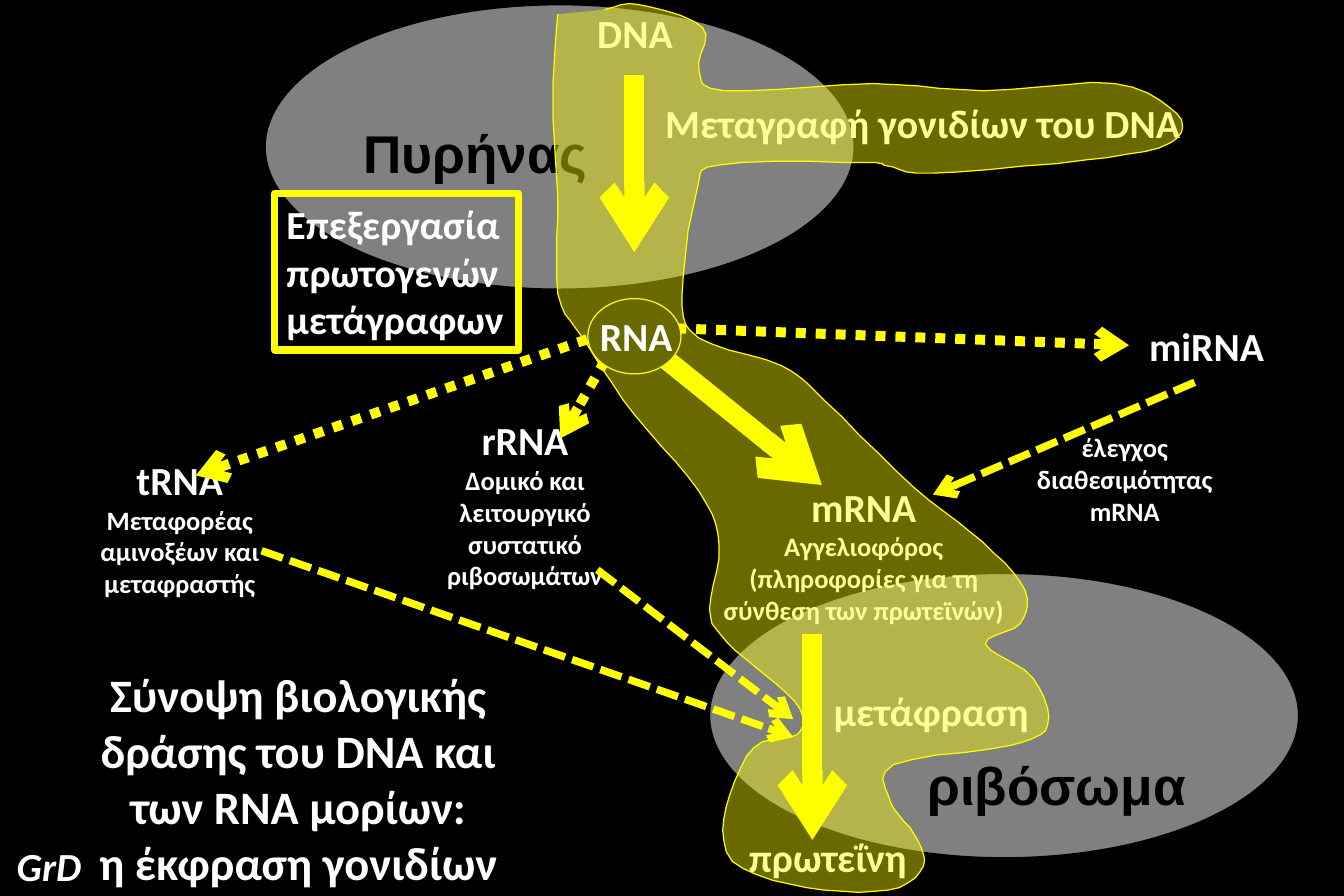
from pptx import Presentation
from pptx import util as u
from pptx.dml.color import RGBColor
from pptx.enum import dml, shapes, text
from pptx.oxml.ns import qn
from lxml import etree

PX = 9144  # EMU in one px, 100 px to the inch
YELLOW, WHITE, BLACK, GREY = "FFFF00", "FFFFFF", "000000", "808080"
DOTS, DASHES = dml.MSO_LINE.ROUND_DOT, dml.MSO_LINE.SQUARE_DOT
MIDDLE, TOP = text.MSO_ANCHOR.MIDDLE, text.MSO_ANCHOR.TOP
CENTER, LEFT = text.PP_ALIGN.CENTER, text.PP_ALIGN.LEFT

# Main path DNA -> RNA -> mRNA -> protein, with the branch for transcription
MAIN_PATH = [
    (467, 12), (463, 85), (467, 165), (467, 246), (488, 283), (531, 347), (585, 411),
    (602, 456), (594, 510), (608, 537), (656, 578), (671, 597), (667, 615), (631, 626),
    (608, 675), (613, 721), (675, 743), (744, 745), (773, 725), (765, 698), (746, 673),
    (748, 640), (846, 624), (877, 607), (865, 568), (825, 539), (854, 522), (858, 494),
    (823, 454), (765, 408), (692, 337), (654, 306), (585, 283), (571, 246), (583, 161),
    (603, 138), (723, 136), (743, 139), (781, 145), (908, 134), (979, 120), (985, 95),
    (933, 70), (823, 76), (731, 70), (606, 76), (585, 58), (588, 23), (535, 4), (506, 8),
]


def rgb(value):
    return RGBColor.from_string(value)


def smooth(points, steps=5):
    """Points of a Catmull-Rom curve that passes through the given points."""
    curve = []
    for a, b, c, d in zip(points[:1] + points, points, points[1:],
                          points[2:] + points[-1:]):
        for t in (i / steps for i in range(steps)):
            curve.append(tuple(
                q + t / 2 * (r - p + t * (2 * p - 5 * q + 4 * r - s
                                          + t * (3 * (q - r) + s - p)))
                for p, q, r, s in zip(a, b, c, d)))
    return curve + points[-1:]


def write(tf, content, *, size=24, sizes=None, font="Calibri", color=WHITE, italic=False,
          align=CENTER, anchor=TOP, wrap=True, inset=(10, 5)):
    """Fill a text frame, one paragraph a line; sizes gives each line its own size."""
    tf.word_wrap, tf.vertical_anchor = wrap, anchor
    tf.auto_size = text.MSO_AUTO_SIZE.NONE
    tf.margin_left, tf.margin_top = (n * PX for n in inset)
    tf.margin_right, tf.margin_bottom = 10 * PX, 5 * PX
    for i, line in enumerate(content.split("\n")):
        p = tf.paragraphs[0] if i == 0 else tf.add_paragraph()
        p.alignment = align
        r = p.add_run()
        r.text = line
        r.font.name, r.font.size = font, u.Pt(sizes[i] if sizes else size)
        r.font.bold, r.font.italic = True, italic
        r.font.color.rgb = rgb(color)


class Diagram:
    def __init__(self, slide):
        self.slide, self.shapes = slide, slide.shapes

    def style(self, sp, fill, line, width):
        sp.shadow.inherit = False
        if fill:
            sp.fill.solid()
            sp.fill.fore_color.rgb = rgb(fill)
        else:
            sp.fill.background()
        sp.line.color.rgb, sp.line.width = rgb(line), u.Pt(width)

    def shape(self, kind, box, fill=None, line=YELLOW, width=0.75):
        sp = self.shapes.add_shape(kind, *(n * PX for n in box))
        self.style(sp, fill, line, width)
        return sp

    def compartment(self, x, y, name, inset):
        sp = self.shape(shapes.MSO_SHAPE.OVAL, (x, y, 493, 238), GREY, BLACK)
        write(sp.text_frame, name, size=32, font="Arial", color=BLACK,
              align=LEFT, wrap=False, inset=inset)

    def title(self, box, content):
        sp = self.shapes.title
        sp.left, sp.top, sp.width, sp.height = (n * PX for n in box)
        write(sp.text_frame, content, anchor=MIDDLE)
        self.shapes.element.append(sp.element)  # in front of the compartments

    def label(self, box, content, **fmt):
        sp = self.shapes.add_textbox(*(n * PX for n in box))
        write(sp.text_frame, content, **fmt)

    def arrow(self, start, end, width, dash=None):
        cxn = self.shapes.add_connector(shapes.MSO_CONNECTOR.STRAIGHT,
                                        *(n * PX for n in start + end))
        cxn.line.color.rgb, cxn.line.width = rgb(YELLOW), u.Pt(width)
        if dash:
            cxn.line.dash_style = dash
        props = cxn.element.spPr
        etree.SubElement(props.find(qn("a:ln")), qn("a:tailEnd"), type="arrow")
        etree.SubElement(props, qn("a:effectLst"))

    def region(self, points, opacity):
        builder = self.shapes.build_freeform(*points[0], scale=PX)
        builder.add_line_segments(points[1:], close=False)
        sp = builder.convert_to_shape()
        self.style(sp, YELLOW, YELLOW, 0.75)
        color = next(sp.element.spPr.iter(qn("a:srgbClr")))
        etree.SubElement(color, qn("a:alpha"), val=str(opacity * 1000))


def main():
    prs = Presentation()
    prs.slide_width, prs.slide_height = 1125 * PX, 750 * PX
    s = prs.slides.add_slide(prs.slide_layouts[5])
    s.background.fill.solid()
    s.background.fill.fore_color.rgb = rgb(BLACK)
    d = Diagram(s)

    d.compartment(222, 4, "Πυρήνας", (10, 62))
    d.compartment(594, 480, "ριβόσωμα", (110, 115))
    d.title((461, 0, 141, 55), "DNA")

    for box, content in [
        ((47, 379, 207, 125), "tRNA\nΜεταφορέας αμινοξέων και μεταφραστής"),
        ((336, 359, 207, 125), "rRNA\nΔομικό και λειτουργικό συστατικό ριβοσωμάτων"),
        ((594, 422, 258, 84),
         "mRNA\nΑγγελιοφόρος\n(πληροφορίες για τη σύνθεση των πρωτεϊνών)"),
        ((887, 227, 246, 125), "miRNA"),
    ]:
        d.label(box, content, sizes=(24, 16, 16), anchor=MIDDLE)

    for box, content in [
        ((547, 78, 454, 50), "Μεταγραφή γονιδίων του DNA"),
        ((688, 570, 185, 50), "μετάφραση"),
        ((617, 692, 153, 50), "πρωτεΐνη"),
    ]:
        d.label(box, content, align=LEFT, wrap=False)

    rna = (523, 273)
    for start, end, width, dash in [
        ((531, 63), (531, 211), 12, None),
        (rna, (164, 398), 6, DOTS),
        (rna, (469, 367), 6, DOTS),
        (rna, (688, 406), 12, None),
        ((516, 273), (945, 289), 6, DOTS),
        ((680, 531), (680, 703), 12, None),
        ((219, 461), (664, 617), 4.5, DASHES),
        ((500, 477), (664, 602), 4.5, DASHES),
        ((1000, 320), (781, 414), 4.5, DASHES),
    ]:
        d.arrow(start, end, width, dash)

    d.shape(shapes.MSO_SHAPE.OVAL, (492, 250, 78, 63), BLACK)
    d.label((836, 352, 211, 98), "έλεγχος διαθεσιμότητας mRNA", size=16, anchor=MIDDLE)
    d.label((47, 553, 405, 199),
            "Σύνοψη βιολογικής δράσης του DNA και των RNA μορίων:\nη έκφραση γονιδίων", size=28)
    d.region(smooth(MAIN_PATH), 41)
    d.label((0, 700, 82, 50), "GrD", italic=True)
    d.label((429, 218, 207, 125), "RNA", anchor=MIDDLE)
    processing = d.shape(shapes.MSO_SHAPE.RECTANGLE, (230, 162, 204, 131), width=4.5)
    write(processing.text_frame, "Επεξεργασία πρωτογενών μετάγραφων", align=LEFT)

    prs.save("out.pptx")


if __name__ == "__main__":
    main()
